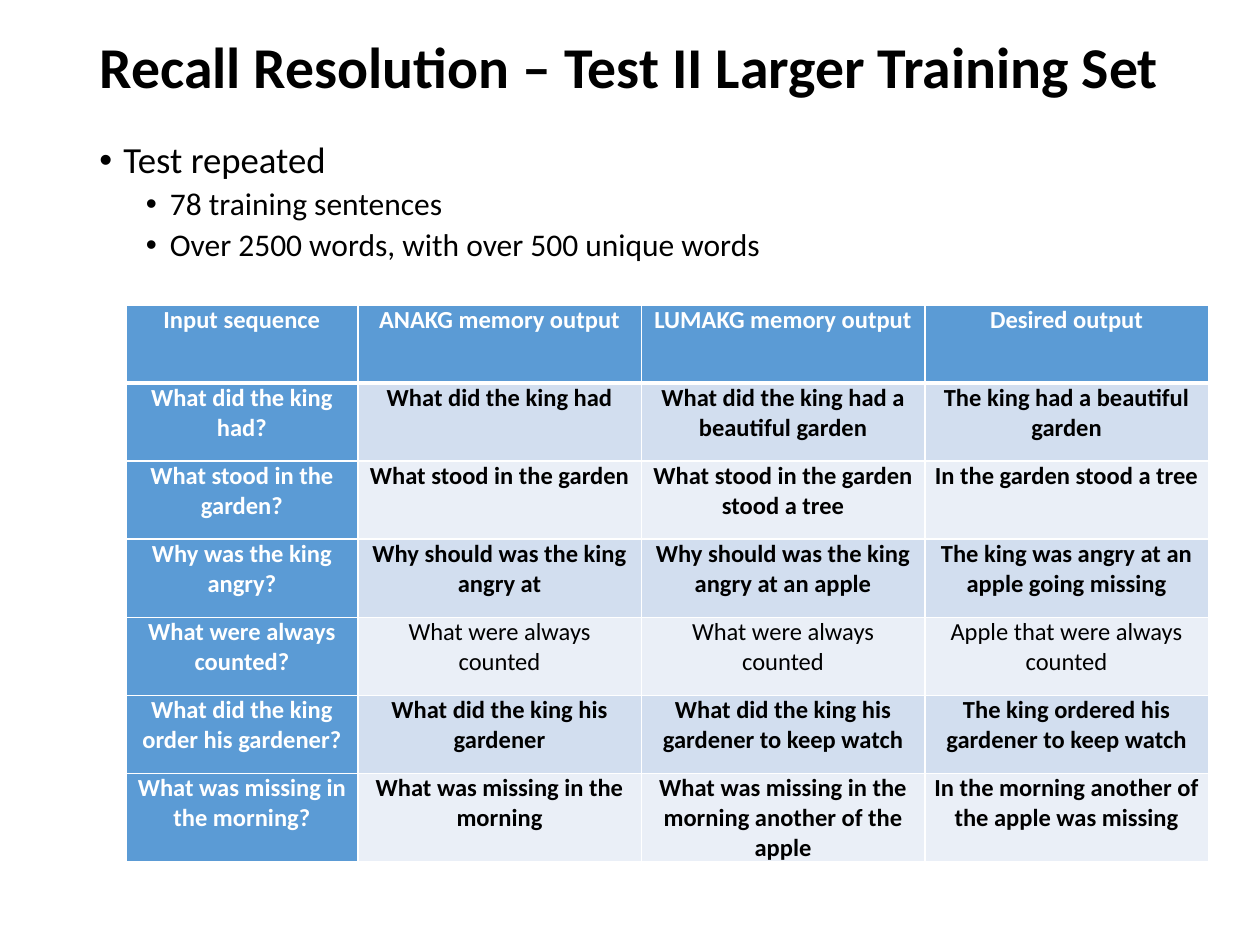
import lxml.etree
import pptx
import pptx.dml.color
import pptx.enum.text
import pptx.oxml.ns
import pptx.util

Inches = pptx.util.Inches
Pt = pptx.util.Pt
RGBColor = pptx.dml.color.RGBColor
qn = pptx.oxml.ns.qn

# Content
TITLE = "Recall Resolution – Test II Larger Training Set"
BULLETS = [
    (0, "Test repeated"),
    (1, "78 training sentences"),
    (1, "Over 2500 words, with over 500 unique words"),
]
TABLE_ROWS = [
    ("Input sequence", "ANAKG memory output", "LUMAKG memory output", "Desired output"),
    ("What did the king had?", "What did the king had",
     "What did the king had a beautiful garden", "The king had a beautiful garden"),
    ("What stood in the garden?", "What stood in the garden",
     "What stood in the garden stood a tree", "In the garden stood a tree"),
    ("Why was the king angry?", "Why should was the king angry at",
     "Why should was the king angry at an apple",
     "The king was angry at an apple going missing"),
    ("What were always counted?", "What were always counted",
     "What were always counted", "Apple that were always counted"),
    ("What did the king order his gardener?", "What did the king his gardener",
     "What did the king his gardener to keep watch",
     "The king ordered his gardener to keep watch"),
    ("What was missing in the morning?", "What was missing in the morning",
     "What was missing in the morning another of the apple",
     "In the morning another of the apple was missing"),
]
PLAIN_ROW = 4  # the only row whose answers are not bold

# Format
FONT = "Calibri"
BLACK = RGBColor(0x00, 0x00, 0x00)
WHITE = RGBColor(0xFF, 0xFF, 0xFF)
BLUE = RGBColor(0x5B, 0x9B, 0xD5)
BANDS = (RGBColor(0xEA, 0xEF, 0xF7), RGBColor(0xD2, 0xDE, 0xEF))
COLUMN_WIDTHS = (1.84, 2.25, 2.25, 2.25)
ROW_HEIGHT = 0.62
BULLET_LEVELS = {
    0: {"size": 21, "before": 7.5, "margin": 0.19},
    1: {"size": 18, "before": 3.8, "margin": 0.56},
}
BULLET_HANG = 0.19


def set_values(target, values):
    for name, value in values.items():
        setattr(target, name, value)


def write_paragraph(paragraph, text, size, color, bold, **layout):
    run = paragraph.add_run()
    run.text = text
    set_values(run.font, {"name": FONT, "size": Pt(size), "bold": bold})
    run.font.color.rgb = color
    set_values(paragraph, layout)


def add_bullet(paragraph, margin):
    properties = paragraph._p.get_or_add_pPr()
    properties.set("marL", str(Inches(margin)))
    properties.set("indent", str(-Inches(BULLET_HANG)))
    lxml.etree.SubElement(properties, qn("a:buFont")).set("typeface", "Arial")
    lxml.etree.SubElement(properties, qn("a:buChar")).set("char", "•")


def set_borders(cell, widths):
    properties = cell._tc.get_or_add_tcPr()
    for position, (side, width) in enumerate(widths.items()):
        line = lxml.etree.Element(qn("a:ln" + side), w=str(Pt(width)))
        fill = lxml.etree.SubElement(line, qn("a:solidFill"))
        lxml.etree.SubElement(fill, qn("a:srgbClr")).set("val", str(WHITE))
        properties.insert(position, line)


def add_title(slide):
    title = slide.shapes.title
    set_values(title, {"left": Inches(0.69), "top": Inches(-0.17),
                       "width": Inches(8.62), "height": Inches(1.45)})
    frame = title.text_frame
    set_values(frame, {"word_wrap": True,
                       "auto_size": pptx.enum.text.MSO_AUTO_SIZE.NONE,
                       "vertical_anchor": pptx.enum.text.MSO_ANCHOR.MIDDLE})
    write_paragraph(frame.paragraphs[0], TITLE, 33, BLACK, True,
                    alignment=pptx.enum.text.PP_ALIGN.LEFT, line_spacing=0.9)


def add_bullets(slide):
    box = slide.shapes.add_textbox(Inches(0.69), Inches(1.08), Inches(9.31), Inches(5.67))
    frame = box.text_frame
    frame.word_wrap = True
    for index, (level, text) in enumerate(BULLETS):
        paragraph = frame.add_paragraph() if index else frame.paragraphs[0]
        style = BULLET_LEVELS[level]
        write_paragraph(paragraph, text, style["size"], BLACK, False, level=level,
                        line_spacing=0.9, space_before=Pt(style["before"]))
        add_bullet(paragraph, style["margin"])


def add_results_table(slide):
    frame = slide.shapes.add_table(
        len(TABLE_ROWS), len(COLUMN_WIDTHS), Inches(1), Inches(2.42),
        Inches(sum(COLUMN_WIDTHS)), Inches(ROW_HEIGHT * len(TABLE_ROWS)))
    table = frame.table
    table.first_col = True
    for column, width in zip(table.columns, COLUMN_WIDTHS):
        column.width = Inches(width)
    for row_index, texts in enumerate(TABLE_ROWS):
        table.rows[row_index].height = Inches(ROW_HEIGHT)
        for column_index, text in enumerate(texts):
            cell = table.cell(row_index, column_index)
            heading = row_index == 0 or column_index == 0
            set_values(cell, {"margin_left": Inches(0.07), "margin_right": Inches(0.07),
                              "margin_top": 0, "margin_bottom": 0})
            cell.fill.solid()
            cell.fill.fore_color.rgb = BLUE if heading else BANDS[row_index % 2]
            set_borders(cell, {"L": 1, "R": 1, "T": 3 if row_index == 1 else 1,
                               "B": 3 if row_index == 0 else 1})
            write_paragraph(cell.text_frame.paragraphs[0], text, 14,
                            WHITE if heading else BLACK,
                            heading or row_index != PLAIN_ROW,
                            alignment=pptx.enum.text.PP_ALIGN.CENTER)


def main():
    presentation = pptx.Presentation()
    set_values(presentation, {"slide_width": Inches(10), "slide_height": Inches(7.5)})
    slide = presentation.slides.add_slide(presentation.slide_layouts[5])
    add_bullets(slide)
    add_results_table(slide)
    add_title(slide)
    presentation.save("out.pptx")


if __name__ == "__main__":
    main()
